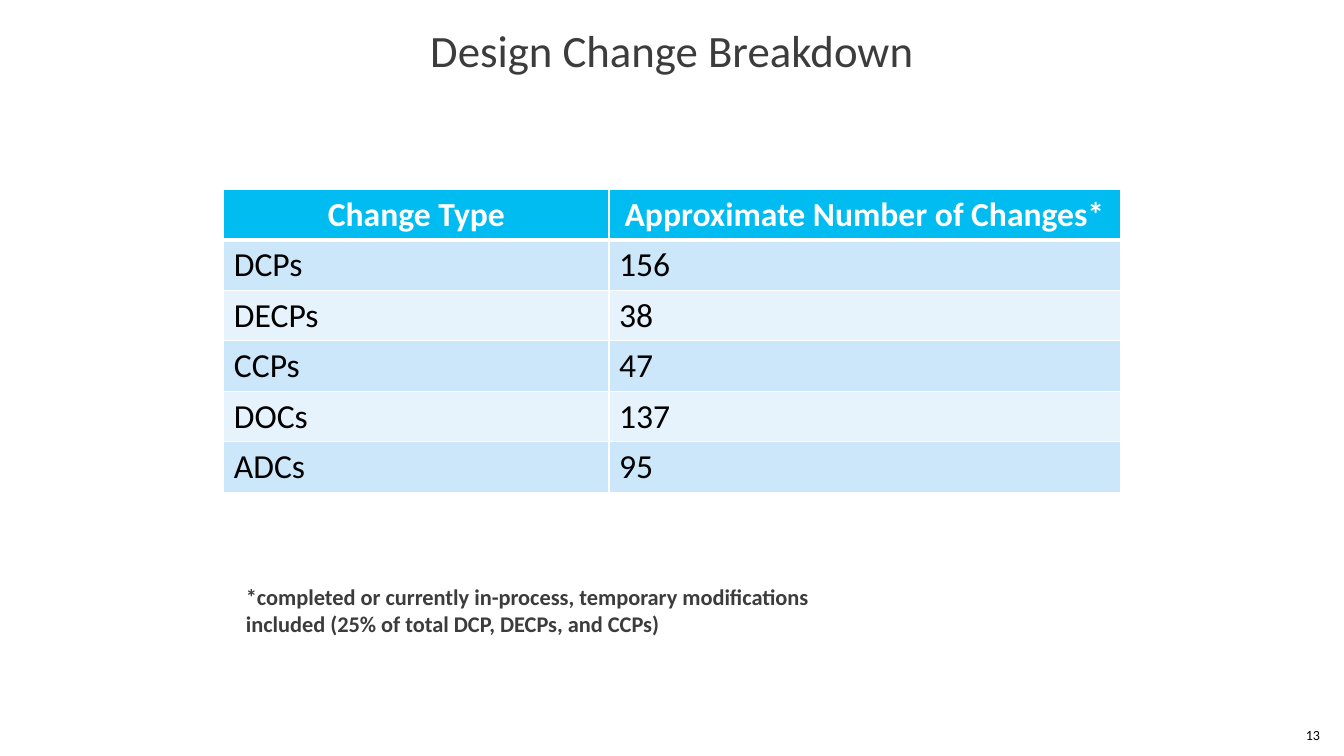
from lxml.etree import SubElement
from pptx import Presentation
from pptx.dml.color import RGBColor
from pptx.enum.text import MSO_ANCHOR, PP_ALIGN
from pptx.oxml.ns import qn
from pptx.util import Inches, Pt

COLORS = {"header": "00BCF1", "odd": "CCE7FA", "even": "E7F3FC",
          "white": "FFFFFF", "black": "000000", "gray": "3C3C3C"}
TEXTS = [
    ("Design Change Breakdown", (0.48, 0.16, 12.37, 0.66), PP_ALIGN.CENTER,
     {"size": Pt(32), "bold": False}, "gray"),
    ("*completed or currently in-process, temporary modifications included "
     "(25% of total DCP, DECPs, and CCPs)", (2.34, 5.79, 6.14, 0.52), PP_ALIGN.LEFT,
     {"size": Pt(16), "bold": True}, "gray"),
    ("13", (12.73, 7.14, 0.46, 0.31), PP_ALIGN.RIGHT,
     {"size": Pt(10), "bold": False}, "black"),
]
CHANGES = [
    ("Change Type", "Approximate Number of Changes*"),
    ("DCPs", "156"),
    ("DECPs", "38"),
    ("CCPs", "47"),
    ("DOCs", "137"),
    ("ADCs", "95"),
]
TABLE_LEFT, TABLE_TOP, ROW_HEIGHT = 2.22, 1.88, 0.5
COLUMN_WIDTHS = (3.82, 5.07)


def write(frame, text, alignment, font_format, color):
    frame.text = text
    paragraph = frame.paragraphs[0]
    paragraph.alignment = alignment
    font = paragraph.runs[0].font
    for name, value in {"name": "Calibri", **font_format}.items():
        setattr(font, name, value)
    font.color.rgb = RGBColor.from_string(COLORS[color])


def add_text(slide, text, box, alignment, font_format, color):
    frame = slide.shapes.add_textbox(*map(Inches, box)).text_frame
    frame.word_wrap = True
    frame.vertical_anchor = MSO_ANCHOR.MIDDLE
    write(frame, text, alignment, font_format, color)


def set_borders(cell, widths):
    properties = cell._tc.get_or_add_tcPr()
    for position, (side, width) in enumerate(widths.items()):
        line = SubElement(properties, qn(f"a:ln{side}"), w=str(Pt(width)))
        fill = SubElement(line, qn("a:solidFill"))
        SubElement(fill, qn("a:srgbClr"), val=COLORS["white"])
        properties.insert(position, line)


def add_changes_table(slide):
    size = (sum(COLUMN_WIDTHS), ROW_HEIGHT * len(CHANGES))
    table = slide.shapes.add_table(
        len(CHANGES), len(COLUMN_WIDTHS),
        *map(Inches, (TABLE_LEFT, TABLE_TOP, *size))).table
    for column, width in zip(table.columns, COLUMN_WIDTHS):
        column.width = Inches(width)
    for row, values in enumerate(CHANGES):
        header = row == 0
        fill = "header" if header else "odd" if row % 2 else "even"
        for column, text in enumerate(values):
            cell = table.cell(row, column)
            cell.fill.solid()
            cell.fill.fore_color.rgb = RGBColor.from_string(COLORS[fill])
            write(cell.text_frame, text, PP_ALIGN.CENTER if header else PP_ALIGN.LEFT,
                  {"size": Pt(24), "bold": header}, "white" if header else "black")
            set_borders(cell, {"L": 1, "R": 1, "T": 3 if row == 1 else 1,
                               "B": 3 if header else 1})


def main():
    """Build the design change breakdown slide."""
    presentation = Presentation()
    presentation.slide_width = Inches(13.33)
    presentation.slide_height = Inches(7.5)
    slide = presentation.slides.add_slide(presentation.slide_layouts[6])
    for entry in TEXTS:
        add_text(slide, *entry)
    add_changes_table(slide)
    presentation.save("out.pptx")


if __name__ == "__main__":
    main()
